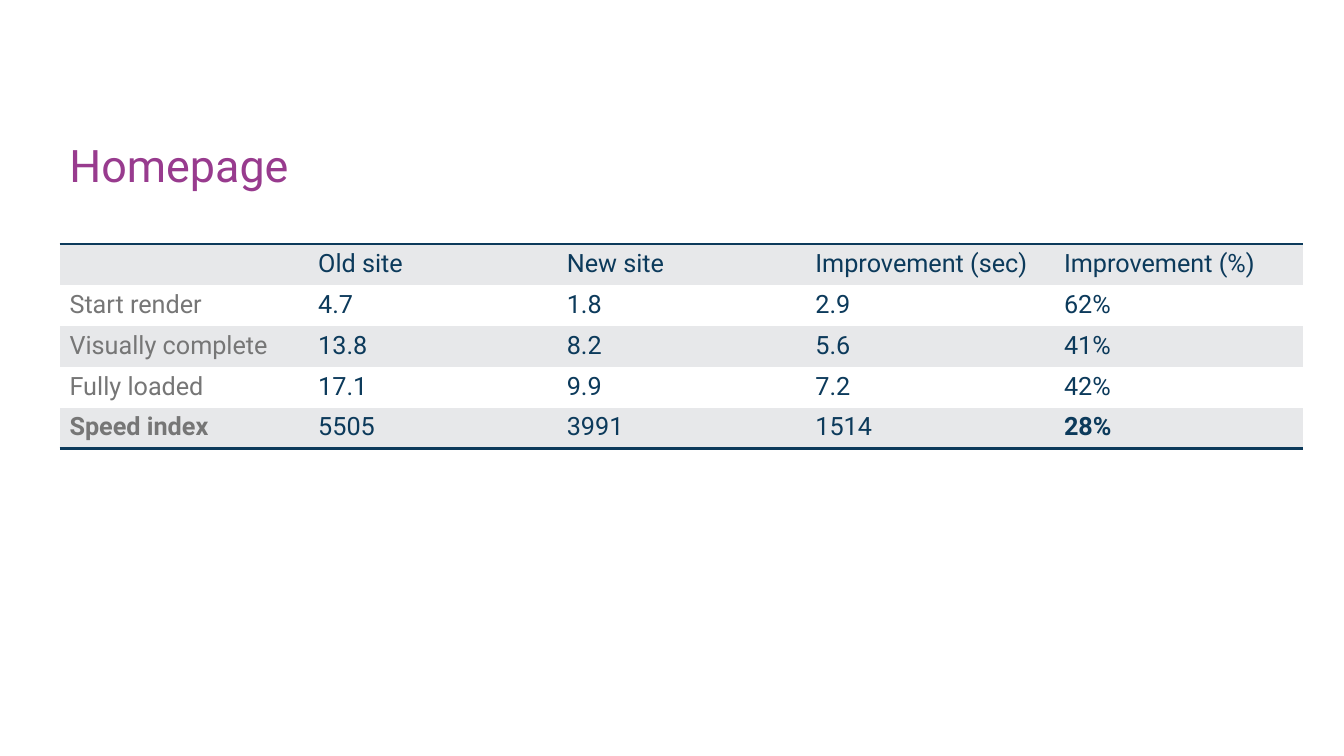
"""Build the homepage speed comparison slide."""
from lxml.etree import SubElement
from pptx import Presentation
from pptx.dml.color import RGBColor
from pptx.enum.text import MSO_ANCHOR
from pptx.oxml import parse_xml
from pptx.oxml.ns import nsdecls, qn
from pptx.util import Inches, Pt

TITLE = "Homepage"
ROWS = [
    ("", "Old site", "New site", "Improvement (sec)", "Improvement (%)"),
    ("Start render", "4.7", "1.8", "2.9", "62%"),
    ("Visually complete", "13.8", "8.2", "5.6", "41%"),
    ("Fully loaded", "17.1", "9.9", "7.2", "42%"),
    ("Speed index", "5505", "3991", "1514", "28%"),
]
BOLD = {"Speed index", "28%"}
PURPLE, NAVY, GREY = "983B8E", "0C3A5B", "767676"
BANDS = ("E7E8EA", "FFFFFF")
LEFT, WIDTH = 0.59, 12.33
TABLE_TOP, ROW_HEIGHT = 2.42, 0.406
NO_STYLE = "{2D5ABB26-0587-4C30-8999-92F81FD0307C}"


def color(value):
    return RGBColor.from_string(value)


def write(para, text, fill, **formats):
    span = para.add_run()
    span.text = text
    for name, value in {"name": "Roboto", **formats}.items():
        setattr(span.font, name, value)
    span.font.color.rgb = color(fill)


def add_title(page):
    box = page.shapes.add_textbox(Inches(LEFT), Inches(1.25), Inches(WIDTH), Inches(0.71))
    frame = box.text_frame
    frame.word_wrap = True
    frame.vertical_anchor = MSO_ANCHOR.BOTTOM
    para = frame.paragraphs[0]
    para.line_spacing = 0.9
    write(para, TITLE, PURPLE, size=Pt(32))


def add_border(cell, side):
    line = parse_xml(f'<a:{side} {nsdecls("a")} w="{Pt(2)}"/>')
    fill = SubElement(line, qn("a:solidFill"))
    SubElement(fill, qn("a:srgbClr"), val=NAVY)
    cell._tc.get_or_add_tcPr().insert(0, line)


def add_speed_table(page):
    count = len(ROWS)
    table = page.shapes.add_table(
        count, len(ROWS[0]), Inches(LEFT), Inches(TABLE_TOP),
        Inches(WIDTH), Inches(ROW_HEIGHT * count)).table
    table.first_row = table.horz_banding = False
    table._tbl.tblPr.find(qn("a:tableStyleId")).text = NO_STYLE
    borders = {0: "lnT", count - 1: "lnB"}
    for row, texts in enumerate(ROWS):
        for column, text in enumerate(texts):
            cell = table.cell(row, column)
            cell.fill.solid()
            cell.fill.fore_color.rgb = color(BANDS[row % 2])
            if row in borders:
                add_border(cell, borders[row])
            if text:
                write(cell.text_frame.paragraphs[0], text,
                      NAVY if column else GREY, size=Pt(18), bold=text in BOLD)


def main():
    deck = Presentation()
    deck.slide_width, deck.slide_height = Inches(13.33), Inches(7.5)
    page = deck.slides.add_slide(deck.slide_layouts[6])
    add_title(page)
    add_speed_table(page)
    deck.save("out.pptx")


if __name__ == "__main__":
    main()
